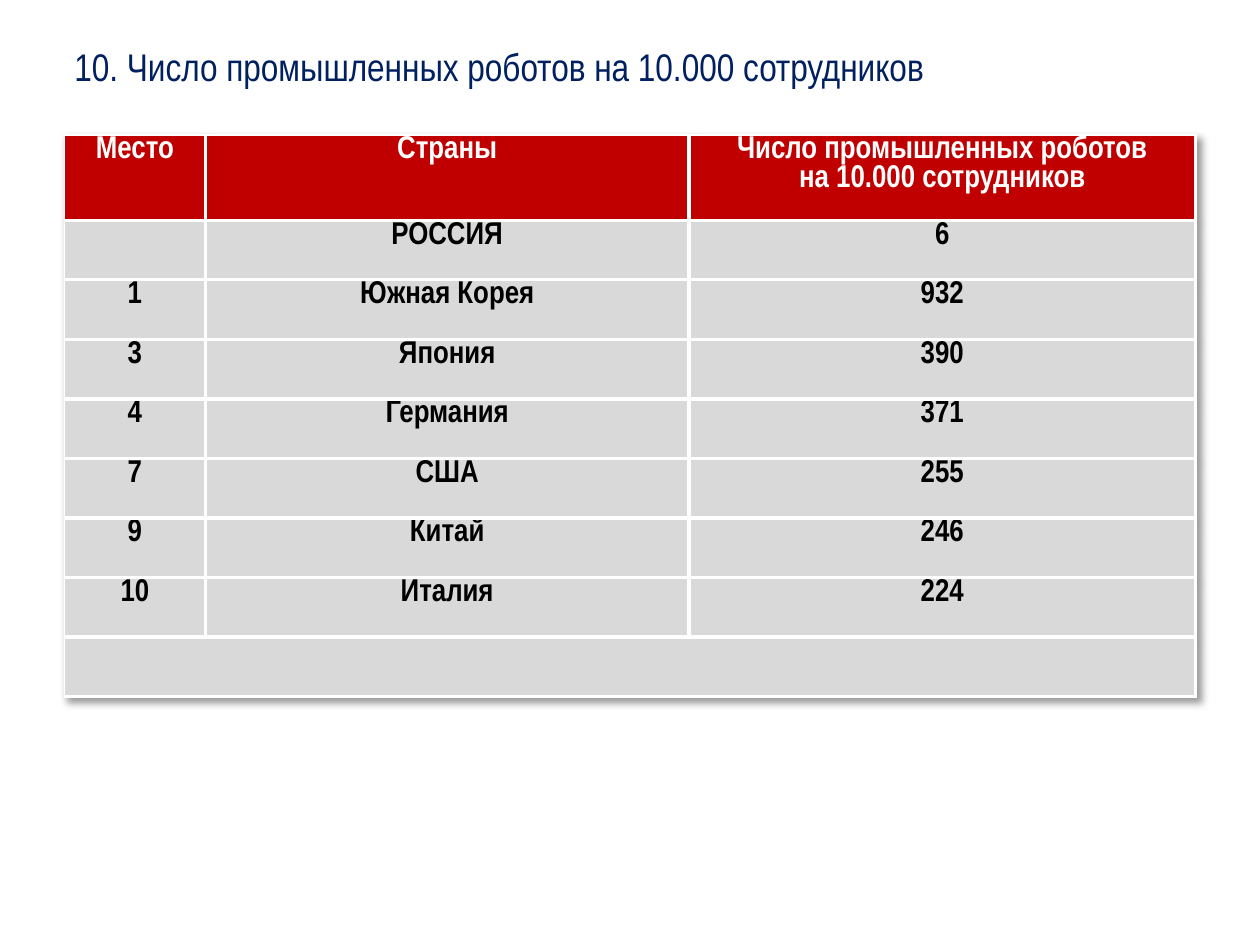
from dataclasses import dataclass

from lxml import etree
from pptx import Presentation
from pptx.dml.color import RGBColor as RGB
from pptx.enum.text import MSO_ANCHOR as ANCHOR, PP_ALIGN as ALIGN
from pptx.oxml import parse_xml
from pptx.oxml.ns import nsdecls, qn
from pptx.util import Cm, Pt


@dataclass(frozen=True)
class Theme:
    font: str = "Arial Narrow"
    title_size: Pt = Pt(22)
    table_size: Pt = Pt(18)
    title: RGB = RGB(0x00, 0x20, 0x60)
    header_fill: RGB = RGB(0xC0, 0x00, 0x00)
    header_text: RGB = RGB(0xFF, 0xFF, 0xFF)
    body_fill: RGB = RGB(0xD9, 0xD9, 0xD9)
    body_text: RGB = RGB(0x00, 0x00, 0x00)
    border: str = "FFFFFF"


THEME = Theme()

HEADER = ["Место", "Страны", "Число промышленных роботов\nна 10.000 сотрудников"]
RANKING = [
    ["", "РОССИЯ", "6"],
    ["1", "Южная Корея", "932"],
    ["3", "Япония", "390"],
    ["4", "Германия", "371"],
    ["7", "США", "255"],
    ["9", "Китай", "246"],
    ["10", "Италия", "224"],
    ["", "", ""],
]
ROWS = [HEADER] + RANKING
COL_WIDTHS = [Cm(2.84), Cm(9.75), Cm(10.21)]
HEADER_HEIGHT, ROW_HEIGHT = Cm(1.72), Cm(1.2)


def style_run(r, size, color, bold=False):
    r.font.name = THEME.font
    r.font.size = size
    r.font.bold = bold
    r.font.color.rgb = color


def set_borders(cell, widths):
    """Draw solid cell borders; widths maps L, R, T, B, in that order, to points."""
    tcPr = cell._tc.get_or_add_tcPr()
    for side, width in widths.items():
        ln = etree.SubElement(tcPr, qn(f"a:ln{side}"), w=str(Pt(width)))
        fill = etree.SubElement(ln, qn("a:solidFill"))
        etree.SubElement(fill, qn("a:srgbClr"), val=THEME.border)


prs = Presentation()
prs.slide_width, prs.slide_height = Cm(25.4), Cm(19.05)
s = prs.slides.add_slide(prs.slide_layouts[6])

# Title
tf = s.shapes.add_textbox(0, Cm(0.74), Cm(24.1), Cm(1.19)).text_frame
tf.word_wrap = True
tf.vertical_anchor = ANCHOR.MIDDLE
tf.text = "10. Число промышленных роботов на 10.000 сотрудников"
p = tf.paragraphs[0]
p._p.get_or_add_pPr().set("indent", str(Cm(1.25)))
style_run(p.runs[0], THEME.title_size, THEME.title)

# Table
frame = s.shapes.add_table(len(ROWS), len(COL_WIDTHS), Cm(1.3), Cm(2.72),
                           sum(COL_WIDTHS), HEADER_HEIGHT + ROW_HEIGHT * len(RANKING))
table = frame.table
for column, width in zip(table.columns, COL_WIDTHS):
    column.width = width
for i, row in enumerate(table.rows):
    row.height = ROW_HEIGHT if i else HEADER_HEIGHT

# Soft shadow under the whole table
table._tbl.tblPr.insert(0, parse_xml(
    f'<a:effectLst {nsdecls("a")}>'
    '<a:outerShdw blurRad="50800" dist="38100" dir="2700000" algn="tl" rotWithShape="0">'
    '<a:srgbClr val="000000"><a:alpha val="40000"/></a:srgbClr>'
    '</a:outerShdw></a:effectLst>'))

for i, values in enumerate(ROWS):
    fill = THEME.body_fill if i else THEME.header_fill
    color = THEME.body_text if i else THEME.header_text
    for j, value in enumerate(values):
        cell = table.cell(i, j)
        set_borders(cell, {"L": 2.25 if j else 1, "R": 2.25,
                           "T": 2.25 if i else 1, "B": 2.25})
        cell.fill.solid()
        cell.fill.fore_color.rgb = fill
        cell.margin_left = cell.margin_right = Cm(0.18)
        cell.margin_top, cell.margin_bottom = Cm(0.03), 0
        cell.text_frame.text = value
        for p in cell.text_frame.paragraphs:
            p.alignment = ALIGN.CENTER
            p.line_spacing = 0.95
            for r in p.runs:
                style_run(r, THEME.table_size, color, bold=True)

last = len(ROWS) - 1
table.cell(last, 0).merge(table.cell(last, len(COL_WIDTHS) - 1))

prs.save("out.pptx")
